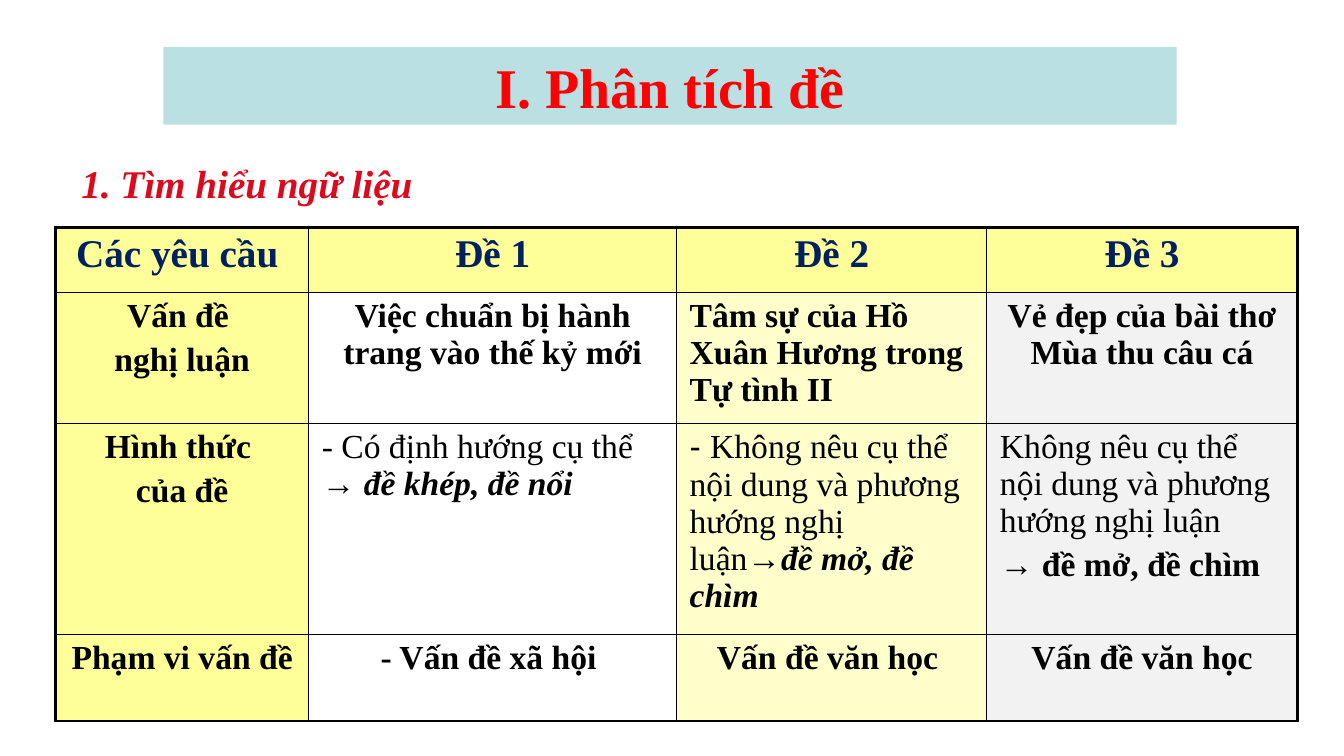
from pptx import Presentation
from pptx import util as u
from pptx.dml.color import RGBColor
from pptx.enum import text
from pptx.oxml import parse_xml
from pptx.oxml.ns import nsdecls

MID, LEFT = text.PP_ALIGN.CENTER, text.PP_ALIGN.LEFT
HEADS = ["Các yêu cầu ", "Đề 1", "Đề 2", "Đề 3"]
ROWS = [
    [["Vấn đề ", "nghị luận"],
     ["Việc chuẩn bị hành trang vào thế kỷ mới"],
     ["Tâm sự của Hồ Xuân Hương trong Tự tình II"],
     ["Vẻ đẹp của bài thơ Mùa thu câu cá"]],
    [["Hình thức ", "của đề"],
     [[("- Có định hướng cụ thể → ", {"bold": False}),
       ("đề khép, đề nổi", {"italic": True})]],
     [[("- ", {"bold": False, "name": "Arial"}),
       ("Không nêu cụ thể nội dung và phương hướng nghị luận→", {"bold": False}),
       ("đề mở, đề chìm", {"italic": True})]],
     [[("Không nêu cụ thể nội dung và phương hướng nghị luận", {"bold": False})],
      "→ đề mở, đề chìm"]],
    [["Phạm vi vấn đề"], ["- Vấn đề xã hội "], ["Vấn đề văn học "], ["Vấn đề văn học"]],
]
FLUSH = {(1, 2), (2, 1), (2, 2), (2, 3)}
FILLS = ["FFFF99", "FFFFFF", "FFFFCC", "F2F2F2"]
WIDTHS = [6.38, 9.27, 7.82, 7.82]
HEIGHTS = [1.63, 3.3, 5.32, 2.18]


def color(code):
    """Turn a hex string into a colour."""
    return RGBColor.from_string(code)


class Page:
    """Hold the style and the current slide."""

    face = "Times New Roman"
    ink = "000000"

    def __init__(self, deck):
        self.slide = deck.slides.add_slide(deck.slide_layouts[5])

    def place(self, shape, x, y, w, h):
        shape.left, shape.top = u.Cm(x), u.Cm(y)
        shape.width, shape.height = u.Cm(w), u.Cm(h)

    def prose(self, frame, paras, size, ink, align=MID, italic=False, first=0):
        frame.word_wrap = True
        for i, parts in enumerate(paras):
            para = frame.add_paragraph() if i else frame.paragraphs[0]
            para.alignment = align
            para.space_before = u.Pt(size * 0.2 if i else first)
            font = para.font
            font.name, font.size = self.face, u.Pt(size)
            font.bold, font.italic = True, italic
            font.color.rgb = color(ink)
            for words, style in [(parts, {})] if isinstance(parts, str) else parts:
                run = para.add_run()
                run.text = words
                for key, value in style.items():
                    if key == "name":
                        run.font.name = value
                    elif key == "bold":
                        run.font.bold = value
                    else:
                        run.font.italic = value

    def title(self, words, box, fill, ink):
        shape = self.slide.shapes.title
        self.place(shape, *box)
        shape.fill.solid()
        shape.fill.fore_color.rgb = color(fill)
        shape.text_frame.vertical_anchor = text.MSO_ANCHOR.MIDDLE
        self.prose(shape.text_frame, [words], 40, ink)

    def label(self, words, box, ink):
        shape = self.slide.shapes.add_textbox(*map(u.Cm, box))
        self.prose(shape.text_frame, [words], 28, ink, LEFT, True, 3.6)

    def edge(self, cell, sides):
        props = cell._tc.get_or_add_tcPr()
        for i, (side, width) in enumerate(sides.items()):
            props.insert(i, parse_xml(
                f'<a:ln{side} {nsdecls("a")} w="{u.Pt(width)}"><a:solidFill>'
                f'<a:srgbClr val="{self.ink}"/></a:solidFill></a:ln{side}>'))

    def table(self, x, y):
        grid = self.slide.shapes.add_table(
            len(HEIGHTS), len(WIDTHS), u.Cm(x), u.Cm(y),
            u.Cm(sum(WIDTHS)), u.Cm(sum(HEIGHTS))).table
        grid.first_row = grid.horz_banding = False
        for col, width in zip(grid.columns, WIDTHS):
            col.width = u.Cm(width)
        for row, height in zip(grid.rows, HEIGHTS):
            row.height = u.Cm(height)
        lines = [[[head] for head in HEADS]] + ROWS
        end, last = len(HEIGHTS) - 1, len(WIDTHS) - 1
        for r, line in enumerate(lines):
            for c, paras in enumerate(line):
                cell = grid.cell(r, c)
                cell.margin_left = cell.margin_right = u.Cm(0.33)
                cell.fill.solid()
                cell.fill.fore_color.rgb = color(FILLS[c if r else 0])
                align = LEFT if (r, c) in FLUSH else MID
                self.prose(cell.text_frame, paras, 24 if r else 28,
                           self.ink if r else "002060", align)
                outer = {"L": c == 0, "R": c == last, "T": r == 0, "B": r == end}
                self.edge(cell, {k: 2.25 if v else 1 for k, v in outer.items()})


def main():
    """Build the slide and save it."""
    deck = Presentation()
    deck.slide_width, deck.slide_height = u.Cm(33.87), u.Cm(19.05)
    page = Page(deck)
    page.title("I. Phân tích đề", (4.12, 1.18, 25.53, 1.96), "BBE0E3", "FF0000")
    page.table(1.4, 5.74)
    page.label("1. Tìm hiểu ngữ liệu", (1.8, 3.89, 16.08, 1.7), "DB0B1F")
    deck.save("out.pptx")


if __name__ == "__main__":
    main()
